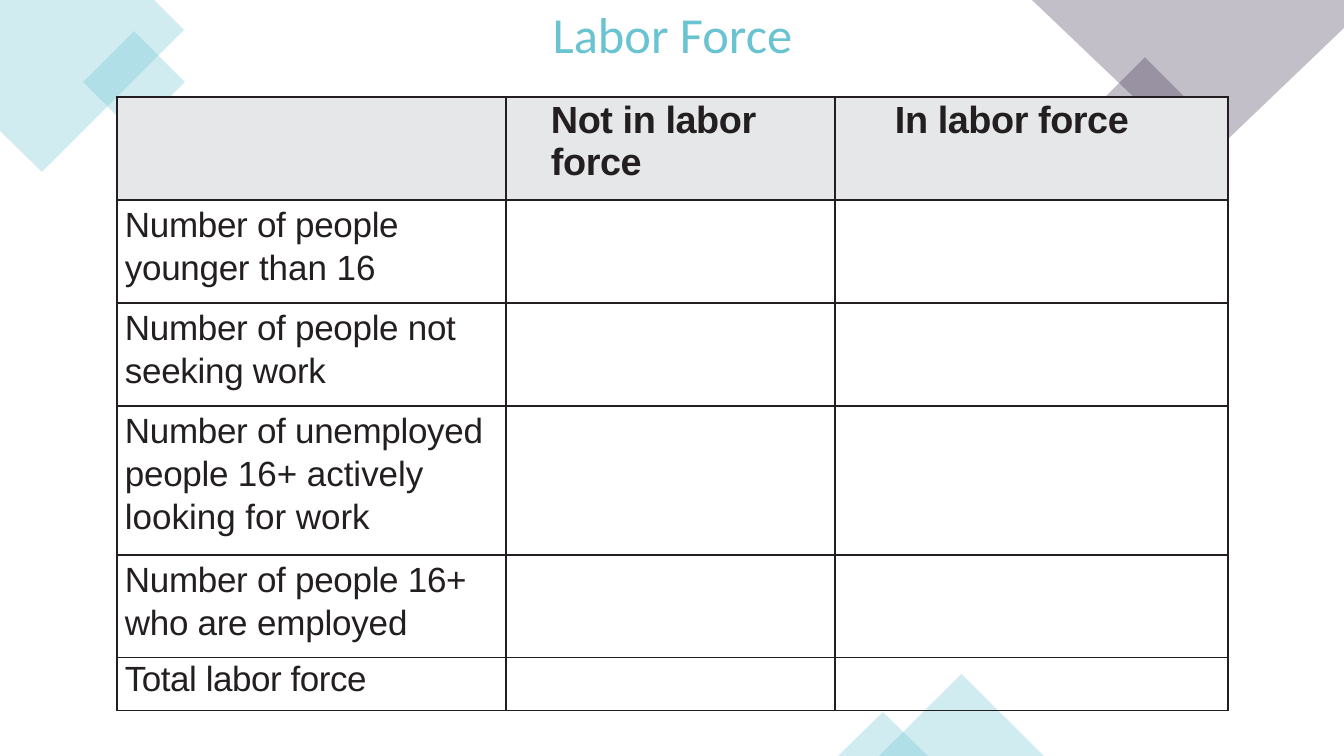
from lxml import etree
from pptx import Presentation
from pptx import util as u
from pptx.dml.color import RGBColor
from pptx.enum import shapes, text
from pptx.oxml import ns


def px(length):
    return u.Inches(length / 100.8)


def colour(value):
    return RGBColor.from_string(value)


class LaborSlide:
    """Holds the slide style and draws each kind of element."""

    TEAL, PLUM, INK, GREY = "69C3D1", "382C4E", "231F20", "E6E7E8"

    def __init__(self, deck):
        self.page = deck.slides.add_slide(deck.slide_layouts[6])

    def tint(self, shape, fill):
        shape.shadow.inherit = False
        shape.line.fill.background()
        shape.fill.solid()
        shape.fill.fore_color.rgb = colour(fill)
        shade = shape._element.spPr.find(ns.qn("a:solidFill"))[0]
        etree.SubElement(shade, ns.qn("a:alpha"), val="30000")

    def preset(self, kind, place, fill, rotation=0):
        shape = self.page.shapes.add_shape(kind, *map(px, place))
        shape.rotation = rotation
        self.tint(shape, fill)

    def outline(self, points, fill):
        corners = [(px(x), px(y)) for x, y in points]
        builder = self.page.shapes.build_freeform(*corners[0])
        builder.add_line_segments(corners[1:])
        self.tint(builder.convert_to_shape(), fill)

    def title(self, words, place):
        box = self.page.shapes.add_textbox(*map(px, place))
        frame = box.text_frame
        frame.word_wrap = True
        frame.vertical_anchor = text.MSO_ANCHOR.MIDDLE
        frame.text = words
        para = frame.paragraphs[0]
        para.alignment = text.PP_ALIGN.CENTER
        para.line_spacing = 0.9
        font = para.runs[0].font
        font.name, font.size = "Calibri", u.Pt(36)
        font.color.rgb = colour(self.TEAL)

    def border(self, cell):
        properties = cell._tc.get_or_add_tcPr()
        for side in ("lnL", "lnR", "lnT", "lnB"):
            line = etree.SubElement(properties, ns.qn("a:" + side), w=str(u.Pt(1)))
            fill = etree.SubElement(line, ns.qn("a:solidFill"))
            etree.SubElement(fill, ns.qn("a:srgbClr"), val=self.INK)

    def label(self, cell, spans, size, indent, bold=False, spacing=None):
        para = cell.text_frame.paragraphs[0]
        properties = para._p.get_or_add_pPr()
        properties.set("marL", str(px(indent)))
        properties.set("indent", "0")
        para.line_spacing = spacing
        for words, tracking in spans:
            span = para.add_run()
            span.text = words
            font = span.font
            font.name, font.size, font.bold = "Arial", u.Pt(size), bold
            font.color.rgb = colour(self.INK)
            font._element.set("spc", str(tracking))

    def table(self, place, widths, heights, headings, labels):
        frame = self.page.shapes.add_table(
            len(heights), len(widths), *map(px, place))
        table = frame.table
        table.first_row = table.horz_banding = False
        for column, width in zip(table.columns, widths):
            column.width = px(width)
        for row, height in zip(table.rows, heights):
            row.height = px(height)
        for index, cell in enumerate(table.iter_cells()):
            cell.margin_left = cell.margin_right = cell.margin_top = px(2)
            cell.margin_bottom = 0
            self.border(cell)
            if index < len(widths):
                cell.fill.solid()
                cell.fill.fore_color.rgb = colour(self.GREY)
            else:
                cell.fill.background()
        for column, (words, indent) in enumerate(headings, 1):
            self.label(table.cell(0, column), [(words, -30)], 27, indent, True)
        for row, spans in enumerate(labels, 1):
            spacing = 1.1 if row < len(labels) else None
            self.label(table.cell(row, 0), spans, 25, 6, spacing=spacing)


def main():
    deck = Presentation()
    deck.slide_width, deck.slide_height = px(1344), px(756)
    slide = LaborSlide(deck)
    square = shapes.MSO_SHAPE.RECTANGLE
    triangle = shapes.MSO_SHAPE.ISOSCELES_TRIANGLE

    slide.outline([(154, 0), (0, 0), (0, 131), (42, 172), (184, 30)], slide.TEAL)
    slide.preset(square, (98, 46, 72, 72), slide.TEAL, 315)
    slide.preset(square, (1107, 73, 76, 76), slide.PLUM, 315)
    slide.outline([(1344, 0), (1032, 0), (1203, 163), (1344, 28)], slide.PLUM)
    slide.preset(triangle, (879, 674, 165, 82), slide.TEAL)
    slide.preset(triangle, (838, 712, 90, 44), slide.TEAL)
    slide.title("Labor Force", (93, 4, 1159, 67))
    slide.table(
        (117, 97, 1111, 614),
        (389, 329, 393),
        (103, 103, 103, 149, 103, 53),
        [("Not in labor force", 43), ("In labor force", 58)],
        [
            [("Number of people younger ", -20), ("than 16", 0)],
            [("Number of people not seeking work", -20)],
            [("Number of unemployed people ", -20),
             ("16+ actively looking for work", 0)],
            [("Number of people 16+ who are ", -20), ("employed", -10)],
            [("Total labor force", -30)],
        ],
    )
    deck.save("out.pptx")


if __name__ == "__main__":
    main()
